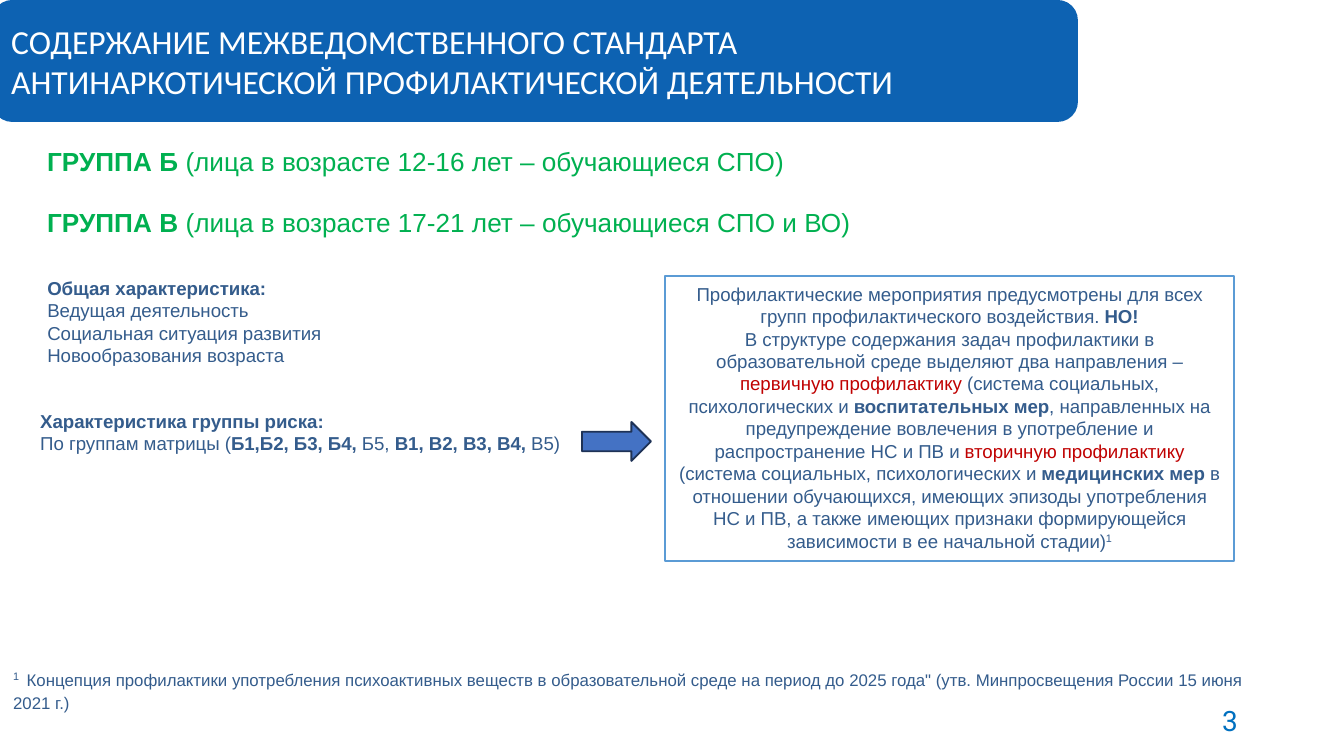
import pptx
import pptx.util
from pptx.dml.color import RGBColor
from pptx.enum.shapes import MSO_SHAPE
from pptx.enum.text import MSO_ANCHOR, PP_ALIGN

PX = 914400 / 134.4  # EMU in one px

WHITE = RGBColor(0xFF, 0xFF, 0xFF)
HEADER_BLUE = RGBColor(0x0D, 0x62, 0xB2)
GREEN = RGBColor(0x00, 0xB0, 0x50)
TEXT_BLUE = RGBColor(0x34, 0x5C, 0x8C)
RED = RGBColor(0xC0, 0x00, 0x00)
FRAME_BLUE = RGBColor(0x5B, 0x9B, 0xD5)
ARROW_BLUE = RGBColor(0x44, 0x72, 0xC4)
ARROW_EDGE = RGBColor(0x1E, 0x32, 0x56)
NUMBER_BLUE = RGBColor(0x00, 0x70, 0xC0)

# Content: a paragraph is a list of runs; a run is text or (text, style)
HEADER = [["СОДЕРЖАНИЕ МЕЖВЕДОМСТВЕННОГО СТАНДАРТА "
           "АНТИНАРКОТИЧЕСКОЙ ПРОФИЛАКТИЧЕСКОЙ ДЕЯТЕЛЬНОСТИ"]]
GROUPS = [
    [("ГРУППА Б ", "bold"), "(лица в возрасте 12-16 лет – обучающиеся СПО)"],
    [("ГРУППА В", "bold"), " (лица в возрасте 17-21 лет – обучающиеся СПО и ВО)"],
]
GENERAL = [
    [("Общая характеристика:", "bold")],
    ["Ведущая деятельность"],
    ["Социальная ситуация развития"],
    ["Новообразования возраста"],
]
RISK = [
    [("Характеристика группы риска:", "bold")],
    ["По группам матрицы (", ("Б1,Б2, Б3, Б4, ", "bold"), "Б5, ",
     ("В1, В2, В3, В4, ", "bold"), "В5)"],
]
MEASURES = [
    ["Профилактические мероприятия предусмотрены для всех групп "
     "профилактического воздействия. ", ("НО!", "bold")],
    ["В структуре содержания задач профилактики в образовательной среде "
     "выделяют два направления – ",
     ("первичную профилактику ", "red"),
     "(система социальных, психологических и ",
     ("воспитательных мер", "bold"),
     ", направленных на предупреждение вовлечения в употребление и "
     "распространение НС и ПВ и ",
     ("вторичную профилактику ", "red"),
     "(система социальных, психологических и ",
     ("медицинских мер ", "bold"),
     "в отношении обучающихся, имеющих эпизоды употребления НС и ПВ, а также "
     "имеющих признаки формирующейся зависимости в ее начальной стадии)",
     ("1", "super")],
]
FOOTNOTE = [[
    ("1", "super"), (" ", "gap"),
    "Концепция профилактики употребления психоактивных веществ в образовательной "
    "среде на период до 2025 года\" (утв. Минпросвещения России 15 июня 2021 г.)",
]]
NUMBER = [["3"]]


def style_run(run, style):
    if style == "bold":
        run.font.bold = True
    elif style == "red":
        run.font.color.rgb = RED
    elif style == "super":
        run.font.size = pptx.util.Pt(10)
        run._r.get_or_add_rPr().set("baseline", "30000")
    elif style == "gap":
        run.font.size = pptx.util.Pt(18)
        run.font.name = "Cabin"


def write(part, paragraphs, size, color, font="Arial", align=PP_ALIGN.LEFT,
          anchor=MSO_ANCHOR.TOP, spacing=None, gap=0):
    frame = part.text_frame
    frame.word_wrap = True
    frame.vertical_anchor = anchor
    for index, runs in enumerate(paragraphs):
        paragraph = frame.add_paragraph() if index else frame.paragraphs[0]
        paragraph.alignment = align
        if spacing:
            paragraph.line_spacing = spacing
        if gap:
            paragraph.space_after = pptx.util.Pt(gap)
            if index:
                paragraph.space_before = pptx.util.Pt(gap)
        paragraph.font.size = pptx.util.Pt(size)
        paragraph.font.name = font
        paragraph.font.color.rgb = color
        for item in runs:
            text, style = (item, None) if isinstance(item, str) else item
            run = paragraph.add_run()
            run.text = text
            style_run(run, style)


def box(*place):
    return [round(length * PX) for length in place]


def add_shape(slide, kind, place, fill, line=None):
    shape = slide.shapes.add_shape(kind, *box(*place))
    shape.shadow.inherit = False
    shape.fill.solid()
    shape.fill.fore_color.rgb = fill
    if line is None:
        shape.line.fill.background()
    else:
        shape.line.color.rgb = line
        shape.line.width = pptx.util.Pt(1)
    return shape


def add_text(slide, place, paragraphs, size, color, **options):
    write(slide.shapes.add_textbox(*box(*place)), paragraphs, size, color, **options)


def main():
    deck = pptx.Presentation()
    deck.slide_width, deck.slide_height = box(1344, 756)
    slide = deck.slides.add_slide(deck.slide_layouts[6])

    # Slide number
    add_text(slide, (949, 700, 302, 40), NUMBER, 15, NUMBER_BLUE, font="Roboto",
             align=PP_ALIGN.RIGHT, anchor=MSO_ANCHOR.MIDDLE)

    # Header band
    header = add_shape(slide, MSO_SHAPE.ROUNDED_RECTANGLE, (-8, 0, 1086, 122), HEADER_BLUE)
    write(header, HEADER, 18, WHITE, font="Calibri", anchor=MSO_ANCHOR.MIDDLE)

    # Age groups and their characteristics
    add_text(slide, (34, 133, 855, 109), GROUPS, 14, GREEN, spacing=1.2, gap=6)
    add_text(slide, (34, 270, 319, 140), GENERAL, 10, TEXT_BLUE)
    add_text(slide, (27, 403, 569, 145), RISK, 10, TEXT_BLUE)

    # Framed measures with the arrow leading to them
    measures = add_shape(slide, MSO_SHAPE.RECTANGLE, (665, 276, 569, 285), WHITE, FRAME_BLUE)
    write(measures, MEASURES, 10, TEXT_BLUE, align=PP_ALIGN.CENTER)
    add_shape(slide, MSO_SHAPE.RIGHT_ARROW, (582, 422, 69, 39), ARROW_BLUE, ARROW_EDGE)

    # Footnote
    add_text(slide, (0, 646, 1266, 95), FOOTNOTE, 9, TEXT_BLUE)

    deck.save("out.pptx")


if __name__ == "__main__":
    main()
